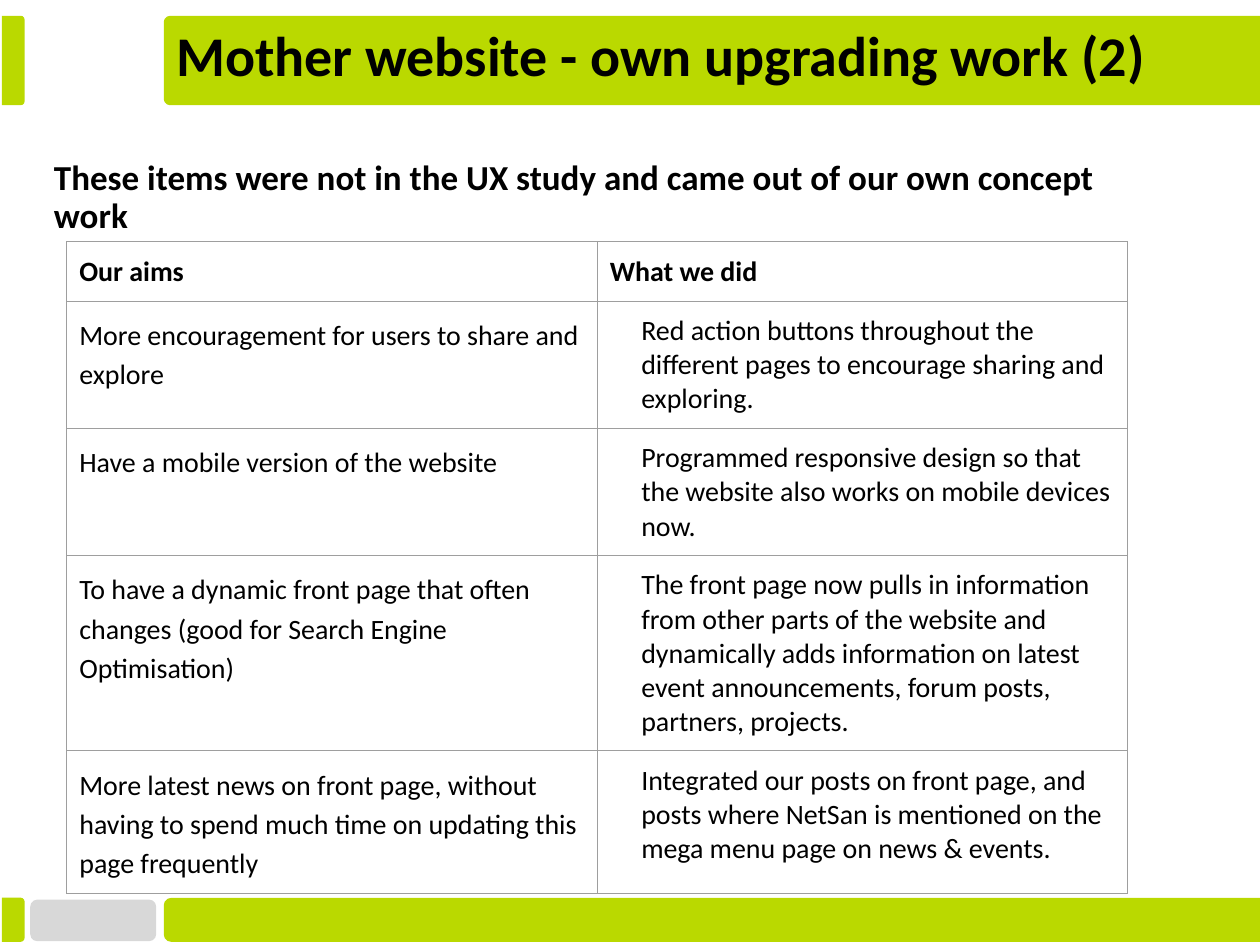
import pptx
import pptx.util
import pptx.dml.color
import pptx.enum.shapes
import pptx.enum.text
import pptx.oxml
import pptx.oxml.ns

COLORS = {"lime": "BAD900", "grey": "D8D8D8", "text": "000000", "border": "9E9E9E"}
PRESET = pptx.enum.shapes.MSO_SHAPE
INSET = pptx.util.Inches(0.1)

presentation = pptx.Presentation()
presentation.slide_width = pptx.util.Inches(10)
presentation.slide_height = pptx.util.Inches(7.5)
column = presentation.slide_width // 100
row = presentation.slide_height // 75
slide = presentation.slides.add_slide(presentation.slide_layouts[6])


def add_bar(preset, center_x, center_y, width, height, rotation, corner, color):
    shape = slide.shapes.add_shape(
        preset, int((center_x - width / 2) * column), int((center_y - height / 2) * row),
        int(width * column), int(height * row))
    shape.rotation = rotation
    shape.adjustments[0] = corner
    shape.shadow.inherit = False
    shape.fill.solid()
    shape.fill.fore_color.rgb = pptx.dml.color.RGBColor.from_string(COLORS[color])
    shape.line.fill.background()


def format_text(text_frame, size, bold, line_spacing):
    paragraph = text_frame.paragraphs[0]
    paragraph.line_spacing = line_spacing
    for run in paragraph.runs:
        run.font.name = "Calibri"
        run.font.size = pptx.util.Pt(size)
        run.font.bold = bold
        run.font.color.rgb = pptx.dml.color.RGBColor.from_string(COLORS["text"])


add_bar(PRESET.ROUNDED_RECTANGLE, 7.4, 73.05, 10, 3.3, 0, 0.17, "grey")
for center_y, thickness, corner in [(73, 3.5, 0.17), (4.8, 7.1, 0.07)]:
    add_bar(PRESET.ROUND_2_SAME_RECTANGLE, 56.5, center_y, thickness, 87, 270, corner, "lime")
    add_bar(PRESET.ROUND_2_SAME_RECTANGLE, 1.05, center_y, thickness, 1.8, 90, 0.17, "lime")

headings = [
    ("Mother website - own upgrading work (2)", 13, 1.4, 94.2, 6.5, 32,
     pptx.enum.text.MSO_ANCHOR.MIDDLE),
    ("These items were not in the UX study and came out of our own concept work",
     3.3, 11.7, 86.3, 7.6, 20, pptx.enum.text.MSO_ANCHOR.TOP),
]
for text, left, top, width, height, size, anchor in headings:
    box = slide.shapes.add_textbox(
        int(left * column), int(top * row), int(width * column), int(height * row))
    text_frame = box.text_frame
    text_frame.word_wrap = True
    text_frame.vertical_anchor = anchor
    text_frame.margin_left = text_frame.margin_right = INSET
    text_frame.margin_top = text_frame.margin_bottom = INSET
    text_frame.text = text
    format_text(text_frame, size, True, 0.9)

aims = [
    ("Our aims", "What we did", 4.7),
    ("More encouragement for users to share and explore",
     "Red action buttons throughout the different pages to encourage sharing and exploring.",
     10.1),
    ("Have a mobile version of the website",
     "Programmed responsive design so that the website also works on mobile devices now.",
     10.1),
    ("To have a dynamic front page that often changes (good for Search Engine Optimisation)",
     "The front page now pulls in information from other parts of the website and dynamically "
     "adds information on latest event announcements, forum posts, partners, projects.", 15.5),
    ("More latest news on front page, without having to spend much time on updating this page "
     "frequently",
     "Integrated our posts on front page, and posts where NetSan is mentioned on the mega menu "
     "page on news & events.", 11.3),
]
table_height = sum(height for aim, action, height in aims)
table = slide.shapes.add_table(
    len(aims), 2, int(5.3 * column), int(19.2 * row),
    int(84.2 * column), int(table_height * row)).table
table.first_row = False
table.horz_banding = False
for table_column in table.columns:
    table_column.width = int(42.1 * column)

for row_index, (aim, action, height) in enumerate(aims):
    table.rows[row_index].height = int(height * row)
    for column_index, text in enumerate((aim, action)):
        cell = table.cell(row_index, column_index)
        cell.margin_left = cell.margin_right = INSET
        cell.margin_top = cell.margin_bottom = INSET
        cell.text = text
        is_header = row_index == 0
        line_spacing = 1.15 if column_index == 0 and not is_header else 1.0
        format_text(cell.text_frame, 16, is_header, line_spacing)
        if column_index == 1 and not is_header:
            properties = cell.text_frame.paragraphs[0]._p.get_or_add_pPr()
            properties.set("marL", str(pptx.util.Inches(0.25)))
            properties.set("indent", "0")
        cell_properties = cell._tc.get_or_add_tcPr()
        for side in ("lnL", "lnR", "lnT", "lnB"):
            cell_properties.append(pptx.oxml.parse_xml(
                f'<a:{side} {pptx.oxml.ns.nsdecls("a")} w="{pptx.util.Pt(0.75)}">'
                f'<a:solidFill><a:srgbClr val="{COLORS["border"]}"/></a:solidFill></a:{side}>'))
        cell.fill.background()

presentation.save("out.pptx")
